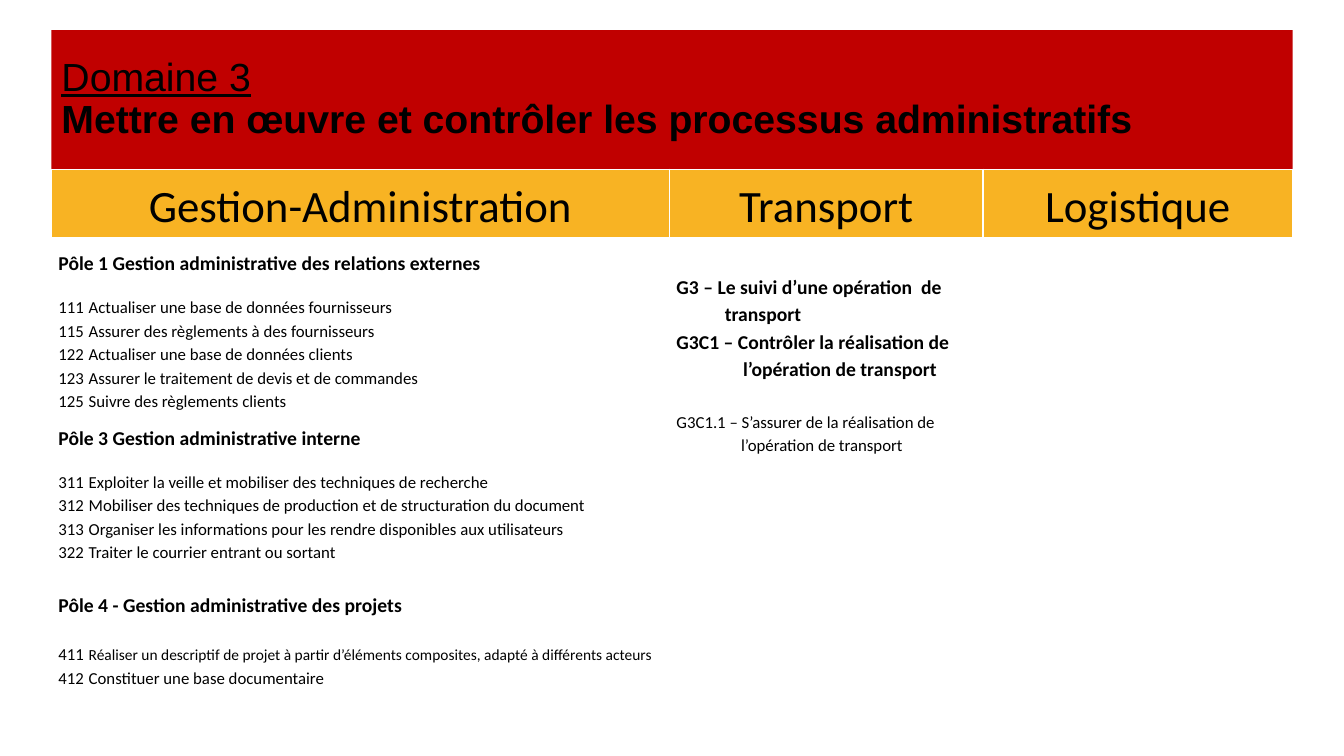
from lxml import etree
from pptx import Presentation
from pptx.dml.color import RGBColor
from pptx.enum.text import MSO_ANCHOR, MSO_AUTO_SIZE, PP_ALIGN
from pptx.oxml.ns import qn
from pptx.util import Inches, Pt

MIDDLE, TOP = MSO_ANCHOR.MIDDLE, MSO_ANCHOR.TOP
LEFT, CENTER = PP_ALIGN.LEFT, PP_ALIGN.CENTER
NO_AUTOFIT = MSO_AUTO_SIZE.NONE
COLORS = {"banner": "C00000", "header": "F8B323", "text": "000000", "border": "FFFFFF"}

SLIDE_WIDTH, SLIDE_HEIGHT = 13.33, 7.5
MARGIN_LEFT, CONTENT_WIDTH = 0.51, 12.31
BANNER_TOP, BANNER_HEIGHT = 0.3, 1.38
COLUMN_WIDTHS = (6.13, 3.11, 3.07)
HEADER_HEIGHT = 0.68
CELL_MARGIN = 0.07
TAB_STOP = 0.3
LINE_SPACING = 1.15
TIGHT_LINE = Pt(13.5)

HEADERS = ("Gestion-Administration", "Transport", "Logistique")

# Each entry: heading, line spacing, points before, points after, tasks (number, label, label size).
POLES = (
    ("Pôle 1 Gestion administrative des relations externes", TIGHT_LINE, 0, 13.5, (
        ("111", "Actualiser une base de données fournisseurs", 12),
        ("115", "Assurer des règlements à des fournisseurs", 12),
        ("122", "Actualiser une base de données clients", 12),
        ("123", "Assurer le traitement de devis et de commandes", 12),
        ("125", "Suivre des règlements clients", 12),
    )),
    ("Pôle 3 Gestion administrative interne", TIGHT_LINE, 13.5, 13.5, (
        ("311", "Exploiter la veille et mobiliser des techniques de recherche", 12),
        ("312", "Mobiliser des techniques de production et de structuration du document", 12),
        ("313", "Organiser les informations pour les rendre disponibles aux utilisateurs", 12),
        ("322", "Traiter le courrier entrant ou sortant", 12),
    )),
    ("Pôle 4 - Gestion administrative des projets", 1.0, 22, 17, (
        ("411", "Réaliser un descriptif de projet à partir d’éléments composites, "
                "adapté à différents acteurs", 11),
        ("412", "Constituer une base documentaire", 12),
    )),
)

# Each entry: text, size, bold, left indent in inches, points before.
TRANSPORT_LINES = (
    ("G3 – Le suivi d’une opération  de", 14, True, 0, 0),
    ("transport", 14, True, 0.48, 0),
    ("G3C1 – Contrôler la réalisation de", 14, True, 0, 0),
    ("l’opération de transport", 14, True, 0.66, 0),
    ("G3C1.1 – S’assurer de la réalisation de", 12, False, 0, 19.6),
    ("l’opération de transport", 12, False, 0.64, 0),
)


def add_run(paragraph, text, size, bold=False, name="Calibri", underline=False):
    """Append a formatted run to a paragraph."""
    run = paragraph.add_run()
    run.text = text
    font = run.font
    font.name, font.size, font.bold, font.underline = name, Pt(size), bold, underline
    font.color.rgb = RGBColor.from_string(COLORS["text"])


def next_paragraph(text_frame, line_spacing=LINE_SPACING, before=0, after=0):
    """Return the unused first paragraph or a new one, with its spacing set."""
    first = text_frame.paragraphs[0]
    paragraph = text_frame.add_paragraph() if first.runs else first
    paragraph.line_spacing = line_spacing
    paragraph.space_before, paragraph.space_after = Pt(before), Pt(after)
    return paragraph


def add_tab_stop(paragraph, position):
    """Give a paragraph one left tab stop, in inches."""
    tabs = etree.SubElement(paragraph._p.get_or_add_pPr(), qn("a:tabLst"))
    etree.SubElement(tabs, qn("a:tab"), pos=str(Inches(position)), algn="l")


def format_cell(cell, color=None, anchor=TOP, margin_top=0):
    """Set the margins, thin borders and fill of a table cell."""
    cell.margin_left = cell.margin_right = Inches(CELL_MARGIN)
    cell.margin_top, cell.margin_bottom = Inches(margin_top), 0
    cell.vertical_anchor = anchor
    properties = cell._tc.get_or_add_tcPr()
    for side in ("L", "R", "T", "B"):
        line = etree.SubElement(properties, qn(f"a:ln{side}"), w=str(Pt(1)))
        fill = etree.SubElement(line, qn("a:solidFill"))
        etree.SubElement(fill, qn("a:srgbClr"), val=COLORS["border"])
    if color:
        cell.fill.solid()
        cell.fill.fore_color.rgb = RGBColor.from_string(color)
    else:
        cell.fill.background()


def build_banner(title, left, top, width, height):
    """Place the title as a filled banner with two lines."""
    title.left, title.top = Inches(left), Inches(top)
    title.width, title.height = Inches(width), Inches(height)
    title.fill.solid()
    title.fill.fore_color.rgb = RGBColor.from_string(COLORS["banner"])
    text_frame = title.text_frame
    text_frame.vertical_anchor = MIDDLE
    text_frame.auto_size = NO_AUTOFIT
    paragraph = next_paragraph(text_frame, 0.9)
    paragraph.alignment = LEFT
    add_run(paragraph, "Domaine 3", 28, name="Arial", underline=True)
    paragraph.add_line_break()
    add_run(paragraph, "Mettre en œuvre et contrôler les processus administratifs",
            28, bold=True, name="Arial")


def fill_administration(cell):
    """List the poles, each with its numbered tasks."""
    format_cell(cell, margin_top=0.19)
    for heading, line_spacing, before, after, tasks in POLES:
        paragraph = next_paragraph(cell.text_frame, line_spacing, before, after)
        add_run(paragraph, heading, 14, bold=True)
        for number, label, size in tasks:
            paragraph = next_paragraph(cell.text_frame)
            add_tab_stop(paragraph, TAB_STOP)
            add_run(paragraph, f"{number}\t", 12)
            add_run(paragraph, label, size)


def fill_transport(cell):
    """List the transport skills with indented second lines."""
    format_cell(cell, margin_top=0.34)
    for text, size, bold, indent, before in TRANSPORT_LINES:
        paragraph = next_paragraph(cell.text_frame, before=before)
        paragraph._p.get_or_add_pPr().set("marL", str(Inches(indent)))
        add_run(paragraph, text, size, bold)


def build_skills_table(slide, left, top, width, height):
    """Place the table of skills by field of work."""
    table = slide.shapes.add_table(2, len(HEADERS), Inches(left), Inches(top),
                                   Inches(width), Inches(height)).table
    table.first_row = table.horz_banding = False
    for column, column_width in zip(table.columns, COLUMN_WIDTHS):
        column.width = Inches(column_width)
    table.rows[0].height = Inches(HEADER_HEIGHT)
    table.rows[1].height = Inches(height - HEADER_HEIGHT)
    for index, header in enumerate(HEADERS):
        cell = table.cell(0, index)
        format_cell(cell, COLORS["header"], MIDDLE)
        paragraph = next_paragraph(cell.text_frame)
        paragraph.alignment = CENTER
        add_run(paragraph, header, 32)
    fill_administration(table.cell(1, 0))
    fill_transport(table.cell(1, 1))
    format_cell(table.cell(1, 2))


def main():
    """Build the slide and save it."""
    presentation = Presentation()
    presentation.slide_width = Inches(SLIDE_WIDTH)
    presentation.slide_height = Inches(SLIDE_HEIGHT)
    slide = presentation.slides.add_slide(presentation.slide_layouts[5])
    build_banner(slide.shapes.title, MARGIN_LEFT, BANNER_TOP, CONTENT_WIDTH, BANNER_HEIGHT)
    table_top = BANNER_TOP + BANNER_HEIGHT
    build_skills_table(slide, MARGIN_LEFT, table_top, CONTENT_WIDTH, SLIDE_HEIGHT - table_top)
    presentation.save("out.pptx")


if __name__ == "__main__":
    main()
